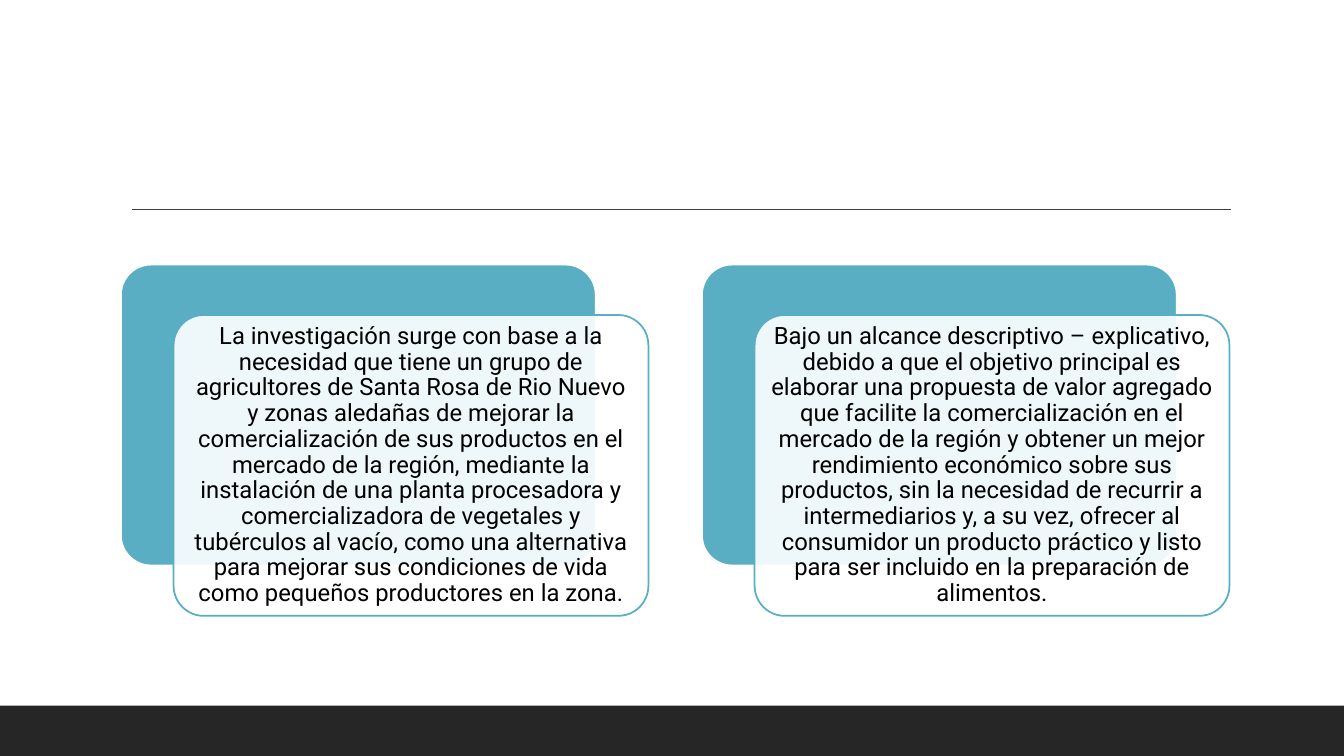
from dataclasses import dataclass

from lxml import etree
from pptx import Presentation
from pptx.dml.color import RGBColor
from pptx.enum.shapes import MSO_CONNECTOR, MSO_SHAPE
from pptx.enum.text import MSO_ANCHOR, PP_ALIGN
from pptx.oxml.ns import qn
from pptx.util import Inches, Pt

RECTANGLE = MSO_SHAPE.RECTANGLE
ROUNDED = MSO_SHAPE.ROUNDED_RECTANGLE
STRAIGHT = MSO_CONNECTOR.STRAIGHT
CENTER = PP_ALIGN.CENTER
MIDDLE = MSO_ANCHOR.MIDDLE
BLANK_LAYOUT = 6


@dataclass(frozen=True)
class Theme:
    white: str = "FFFFFF"
    text: str = "000000"
    accent: str = "5AAEC3"
    rule: str = "404040"
    footer: str = "262626"
    font: str = "Roboto"
    body_size: float = 17
    line_spacing: float = 0.9
    rule_width: float = 1
    card_line: float = 1.25
    card_opacity: int = 90
    card_radius: float = 0.1
    card_margin: float = 0.07


class SlideBuilder:
    """Draws on one slide; every position and size is a percentage of the slide."""

    def __init__(self, presentation, theme):
        self.presentation = presentation
        self.theme = theme
        self.slide = presentation.slides.add_slide(presentation.slide_layouts[BLANK_LAYOUT])

    def across(self, percent):
        return round(self.presentation.slide_width * percent / 100)

    def down(self, percent):
        return round(self.presentation.slide_height * percent / 100)

    def box(self, kind, left, top, width, height, fill, line=None):
        shape = self.slide.shapes.add_shape(
            kind, self.across(left), self.down(top), self.across(width), self.down(height))
        shape.shadow.inherit = False
        shape.fill.solid()
        shape.fill.fore_color.rgb = RGBColor.from_string(fill)
        if line:
            shape.line.color.rgb = RGBColor.from_string(line)
            shape.line.width = Pt(self.theme.card_line)
        else:
            shape.line.fill.background()
        if kind == ROUNDED:
            shape.adjustments[0] = self.theme.card_radius
        return shape

    def rule(self, left, right, top):
        connector = self.slide.shapes.add_connector(
            STRAIGHT, self.across(left), self.down(top), self.across(right), self.down(top))
        connector.line.color.rgb = RGBColor.from_string(self.theme.rule)
        connector.line.width = Pt(self.theme.rule_width)
        etree.SubElement(connector._element.spPr, qn("a:effectLst"))

    def set_opacity(self, shape, percent):
        color = shape._element.spPr.find(qn("a:solidFill"))[0]
        etree.SubElement(color, qn("a:alpha")).set("val", str(percent * 1000))

    def fill_text(self, shape, text):
        frame = shape.text_frame
        frame.text = text
        frame.word_wrap = True
        frame.vertical_anchor = MIDDLE
        margin = Inches(self.theme.card_margin)
        frame.margin_left = frame.margin_right = margin
        frame.margin_top = frame.margin_bottom = margin
        paragraph = frame.paragraphs[0]
        paragraph.alignment = CENTER
        paragraph.line_spacing = self.theme.line_spacing
        font = paragraph.runs[0].font
        font.name = self.theme.font
        font.size = Pt(self.theme.body_size)
        font.color.rgb = RGBColor.from_string(self.theme.text)

    def layered_card(self, left, top, width, height, shift, text):
        theme = self.theme
        self.box(ROUNDED, left, top, width, height, theme.accent, theme.white)
        front = self.box(ROUNDED, left + shift[0], top + shift[1], width, height,
                         theme.white, theme.accent)
        self.set_opacity(front, theme.card_opacity)
        self.fill_text(front, text)


CARD_TEXTS = (
    "La investigación surge con base a la necesidad que tiene un grupo de agricultores "
    "de Santa Rosa de Rio Nuevo y zonas aledañas de mejorar la comercialización de sus "
    "productos en el mercado de la región, mediante la instalación de una planta "
    "procesadora y comercializadora de vegetales y tubérculos al vacío, como una "
    "alternativa para mejorar sus condiciones de vida como pequeños productores en la zona.",
    "Bajo un alcance descriptivo – explicativo, debido a que el objetivo principal es "
    "elaborar una propuesta de valor agregado que facilite la comercialización en el "
    "mercado de la región y obtener un mejor rendimiento económico sobre sus productos, "
    "sin la necesidad de recurrir a intermediarios y, a su vez, ofrecer al consumidor un "
    "producto práctico y listo para ser incluido en la preparación de alimentos.",
)

# Card grid, in percent of the slide
CARD_LEFT, CARD_TOP = 9, 35
CARD_WIDTH, CARD_HEIGHT = 35.33, 39.8
CARD_PITCH = 43.23
CARD_SHIFT = (3.92, 6.67)


def main():
    presentation = Presentation()
    presentation.slide_width = Inches(13.33)
    presentation.slide_height = Inches(7.5)
    theme = Theme()
    builder = SlideBuilder(presentation, theme)

    # Background, rule and footer band
    builder.box(RECTANGLE, 0, 0, 100, 100, theme.white)
    builder.rule(9.83, 91.6, 27.7)
    builder.box(RECTANGLE, 0, 93.33, 100, 6.67, theme.footer)

    # Two layered cards
    for column, text in enumerate(CARD_TEXTS):
        builder.layered_card(CARD_LEFT + column * CARD_PITCH, CARD_TOP,
                             CARD_WIDTH, CARD_HEIGHT, CARD_SHIFT, text)

    presentation.save("out.pptx")


if __name__ == "__main__":
    main()
